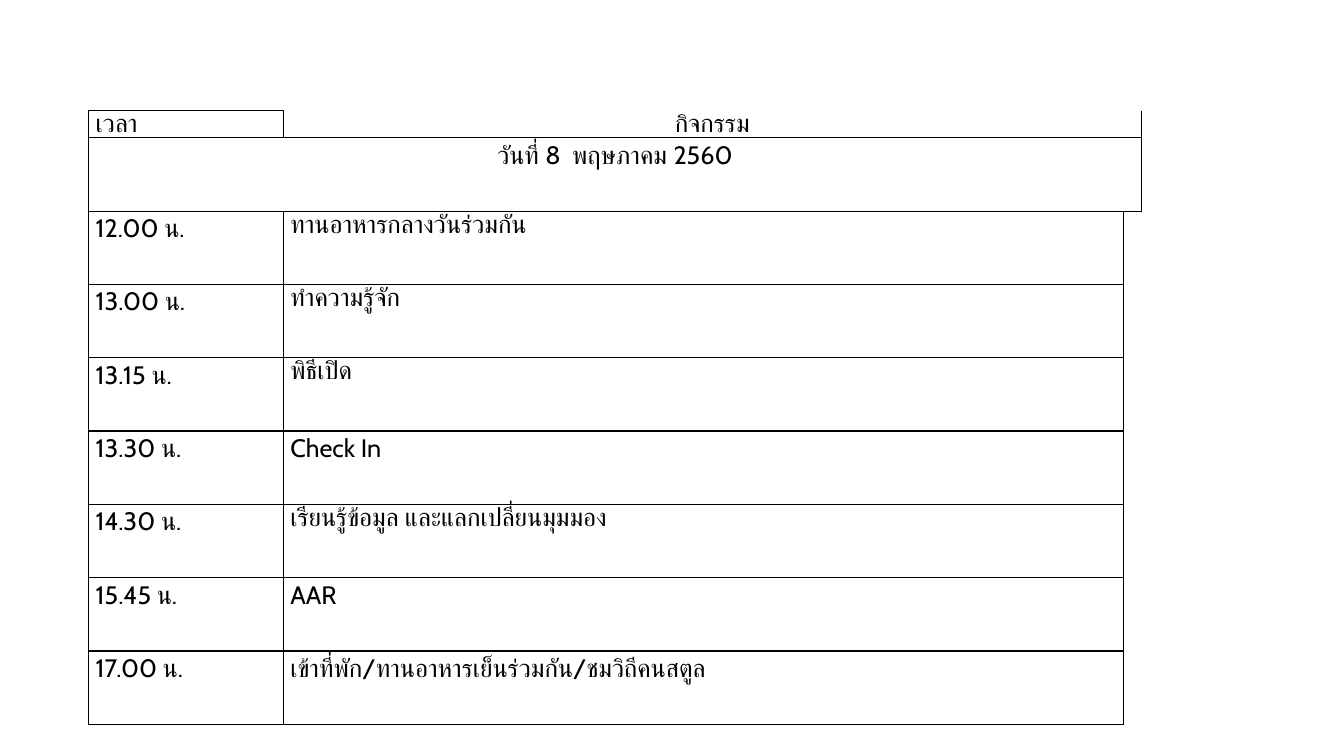
"""Builds the one-slide timetable of the opening day."""
from lxml import etree
from pptx import Presentation, util as u
from pptx.dml.color import RGBColor
from pptx.enum import lang, text
from pptx.oxml import ns

BLACK = RGBColor(0x00, 0x00, 0x00)
COLUMNS = (1.93, 8.33, 0.1)
SCHEDULE = (
    ("12.00 น.", "ทานอาหารกลางวันร่วมกัน"),
    ("13.00 น.", "ทำความรู้จัก"),
    ("13.15 น.", "พิธีเปิด"),
    ("13.30 น.", "Check In"),
    ("14.30 น.", "เรียนรู้ข้อมูล และแลกเปลี่ยนมุมมอง"),
    ("15.45 น.", "AAR"),
    ("17.00 น.", "เข้าที่พัก/ทานอาหารเย็นร่วมกัน/ชมวิถีคนสตูล"),
)
DAY_ROWS = len(SCHEDULE) + 1
HEADER_HEIGHT, ROW_HEIGHT = 0.26, 5.82 / DAY_ROWS
TIME_TAB, ACTIVITY_TAB = 0.84, 0.64


def child(parent, tag, **attributes):
    return etree.SubElement(parent, ns.qn(tag), attributes)


def write(tf, content, font="Cabin", size=18, color=BLACK, align=None, tab=TIME_TAB):
    p = tf.paragraphs[0]
    p.alignment = align
    p.line_spacing = 1.07
    tabs = child(p._p.get_or_add_pPr(), "a:tabLst")
    child(tabs, "a:tab", pos=str(u.Inches(tab)), algn="l")
    r = p.add_run()
    r.text = content
    r.font.name, r.font.size = font, u.Pt(size)
    r.font.language_id = lang.MSO_LANGUAGE_ID.THAI
    r.font.color.rgb = color


class TimetableSlide:
    def __init__(self, prs, line=BLACK, line_width=1):
        self.s = prs.slides.add_slide(prs.slide_layouts[6])
        self.line, self.line_width = line, line_width

    def table(self, left, top, widths, heights):
        frame = self.s.shapes.add_table(
            len(heights), len(widths), u.Inches(left), u.Inches(top),
            u.Inches(sum(widths)), u.Inches(sum(heights)))
        table = frame.table
        table.first_row = table.horz_banding = False
        for column, width in zip(table.columns, widths):
            column.width = u.Inches(width)
        for row, height in zip(table.rows, heights):
            row.height = u.Inches(height)
        return table

    def cell(self, cell, content=None, edges="LRTB", **style):
        tcPr = cell._tc.get_or_add_tcPr()
        for side in "LRTB":
            ln = child(tcPr, f"a:ln{side}", w=str(u.Pt(self.line_width)))
            if side in edges:
                fill = child(ln, "a:solidFill")
                child(fill, "a:srgbClr", val=str(self.line))
            else:
                child(ln, "a:noFill")
        cell.fill.background()
        cell.margin_left = cell.margin_right = u.Inches(0.07)
        cell.margin_top = cell.margin_bottom = 0
        if content:
            write(cell.text_frame, content, **style)

    def merged(self, cells, content, edges="LRTB", **style):
        first, *rest = cells
        first.merge(rest[-1])
        self.cell(first, content, edges, **style)
        for spanned in rest:
            self.cell(spanned, edges=edges)


def main():
    prs = Presentation()
    prs.slide_width, prs.slide_height = u.Inches(13.33), u.Inches(7.5)
    slide = TimetableSlide(prs)
    heights = [HEADER_HEIGHT] + [ROW_HEIGHT] * DAY_ROWS
    table = slide.table(0.88, 1.1, COLUMNS, heights)
    center = text.PP_ALIGN.CENTER

    slide.cell(table.cell(0, 0), "เวลา")
    slide.merged([table.cell(0, c) for c in (1, 2)], "กิจกรรม", "LRB",
                 align=center, tab=ACTIVITY_TAB)
    slide.merged([table.cell(1, c) for c in range(3)], "วันที่ 8  พฤษภาคม 2560",
                 align=center)
    for row, (time, activity) in enumerate(SCHEDULE, 2):
        slide.cell(table.cell(row, 0), time)
        slide.cell(table.cell(row, 1), activity, tab=ACTIVITY_TAB)
        slide.cell(table.cell(row, 2), edges="LT" if row == 2 else "L")
    prs.save("out.pptx")


if __name__ == "__main__":
    main()
